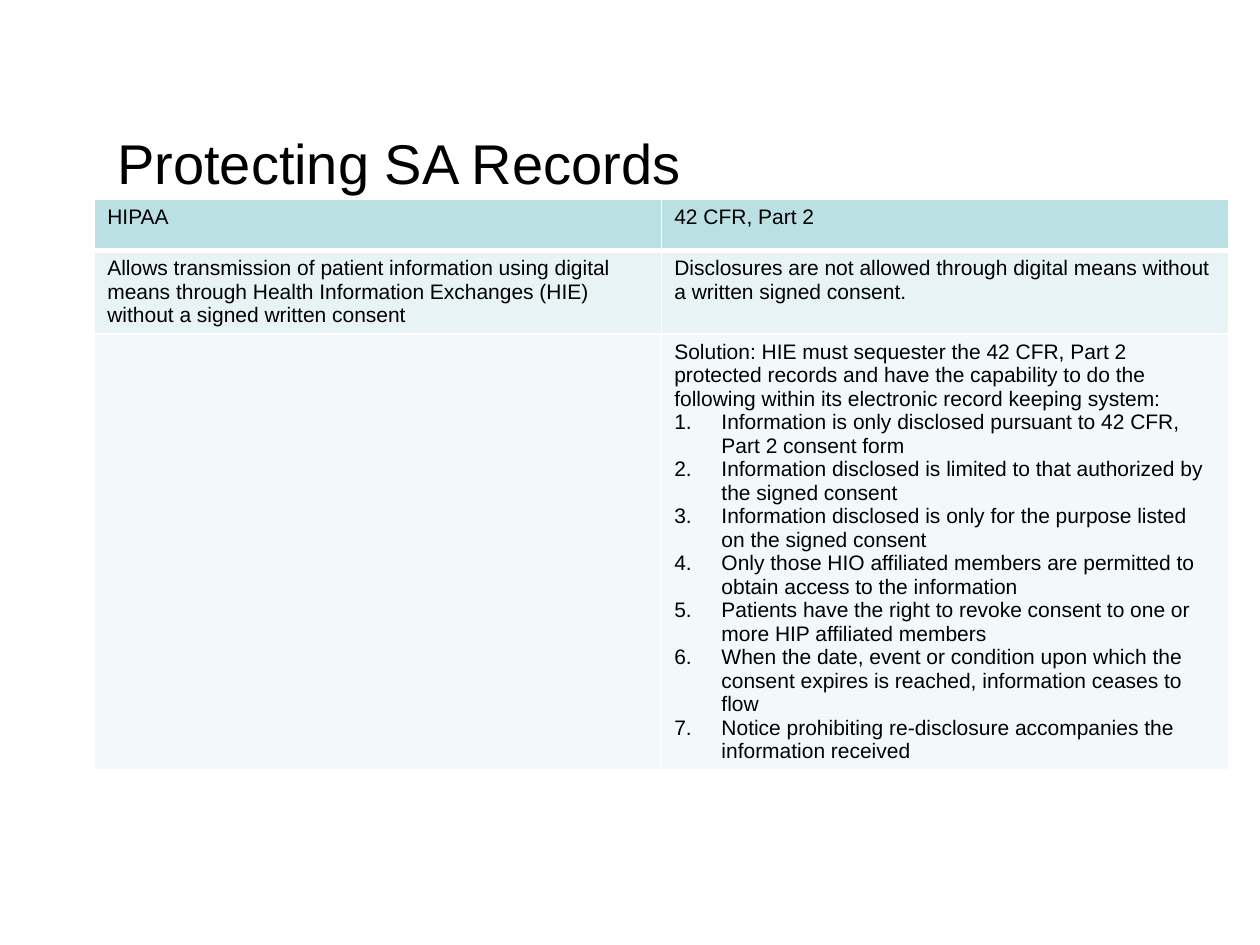
import pptx
import pptx.dml.color
import pptx.enum.text
import pptx.oxml
import pptx.oxml.ns
import pptx.util
from dataclasses import dataclass
from pptx.util import Cm, Pt


@dataclass(frozen=True)
class Theme:
    font: str = "Arial"
    ink: str = "000000"
    rule: str = "FFFFFF"
    fills: tuple = ("BBE0E3", "E7F3F4", "F3F9FA")
    title: int = 32
    body: int = 12


THEME = Theme()
HEIGHTS = (1.03, 1.68, 8.77)
INTRO = ("Solution: HIE must sequester the 42 CFR, Part 2 protected records and have "
         "the capability to do the following within its electronic record keeping system:")
STEPS = [
    "Information is only disclosed pursuant to 42 CFR, Part 2 consent form",
    "Information disclosed is limited to that authorized by the signed consent",
    "Information disclosed is only for the purpose listed on the signed consent",
    "Only those HIO affiliated members are permitted to obtain access to the information",
    "Patients have the right to revoke consent to one or more HIP affiliated members",
    "When the date, event or condition upon which the consent expires is reached, "
    "information ceases to flow",
    "Notice prohibiting re-disclosure accompanies the information received",
]
ROWS = [
    ("HIPAA", "42 CFR, Part 2"),
    ("Allows transmission of patient information using digital means through Health "
     "Information Exchanges (HIE) without a signed written consent",
     "Disclosures are not allowed through digital means without a written signed consent."),
    ("", INTRO),
]


def color(code):
    return pptx.dml.color.RGBColor.from_string(code)


def style(para, size):
    para.font.name = THEME.font
    para.font.size = Pt(size)
    para.font.bold = False
    para.font.color.rgb = color(THEME.ink)


def add_title(slide, text):
    title = slide.shapes.title
    title.left, title.top = Cm(2.11), Cm(2.34)
    title.width, title.height = Cm(22.23), Cm(2.34)
    frame = title.text_frame
    frame.text = text
    frame.margin_top = Cm(0.25)
    frame.vertical_anchor = pptx.enum.text.MSO_ANCHOR.TOP
    para = frame.paragraphs[0]
    para.alignment = pptx.enum.text.PP_ALIGN.LEFT
    style(para, THEME.title)


def set_edges(cell, base):
    """Rule all four sides; base is the bottom width in points."""
    props = cell._tc.get_or_add_tcPr()
    for spot, (side, width) in enumerate(zip("LRTB", (1, 1, 1, base))):
        edge = pptx.oxml.parse_xml(
            f'<a:ln{side} {pptx.oxml.ns.nsdecls("a")} w="{Pt(width)}"><a:solidFill>'
            f'<a:srgbClr val="{THEME.rule}"/></a:solidFill></a:ln{side}>')
        props.insert(spot, edge)


def fill_cell(cell, text, fill, base):
    cell.text = text
    style(cell.text_frame.paragraphs[0], THEME.body)
    cell.fill.solid()
    cell.fill.fore_color.rgb = color(fill)
    set_edges(cell, base)


def add_steps(cell, steps):
    for step in steps:
        para = cell.text_frame.add_paragraph()
        para.text = step
        props = para._p.get_or_add_pPr()
        props.set("marL", str(Cm(0.95)))
        props.set("indent", str(-Cm(0.95)))
        props.append(pptx.oxml.parse_xml(
            f'<a:buAutoNum {pptx.oxml.ns.nsdecls("a")} type="arabicPeriod"/>'))
        style(para, THEME.body)


def add_grid(slide):
    shape = slide.shapes.add_table(len(ROWS), 2, Cm(1.91), Cm(4.02),
                                   Cm(22.86), Cm(sum(HEIGHTS)))
    table = shape.table
    for i, texts in enumerate(ROWS):
        table.rows[i].height = Cm(HEIGHTS[i])
        for j, text in enumerate(texts):
            fill_cell(table.cell(i, j), text, THEME.fills[i], 1 if i else 3)
    add_steps(table.cell(2, 1), STEPS)


def main():
    deck = pptx.Presentation()
    deck.slide_width, deck.slide_height = Cm(25.4), Cm(19.05)
    slide = deck.slides.add_slide(deck.slide_layouts[5])
    add_title(slide, "Protecting SA Records")
    add_grid(slide)
    deck.save("out.pptx")


if __name__ == "__main__":
    main()
